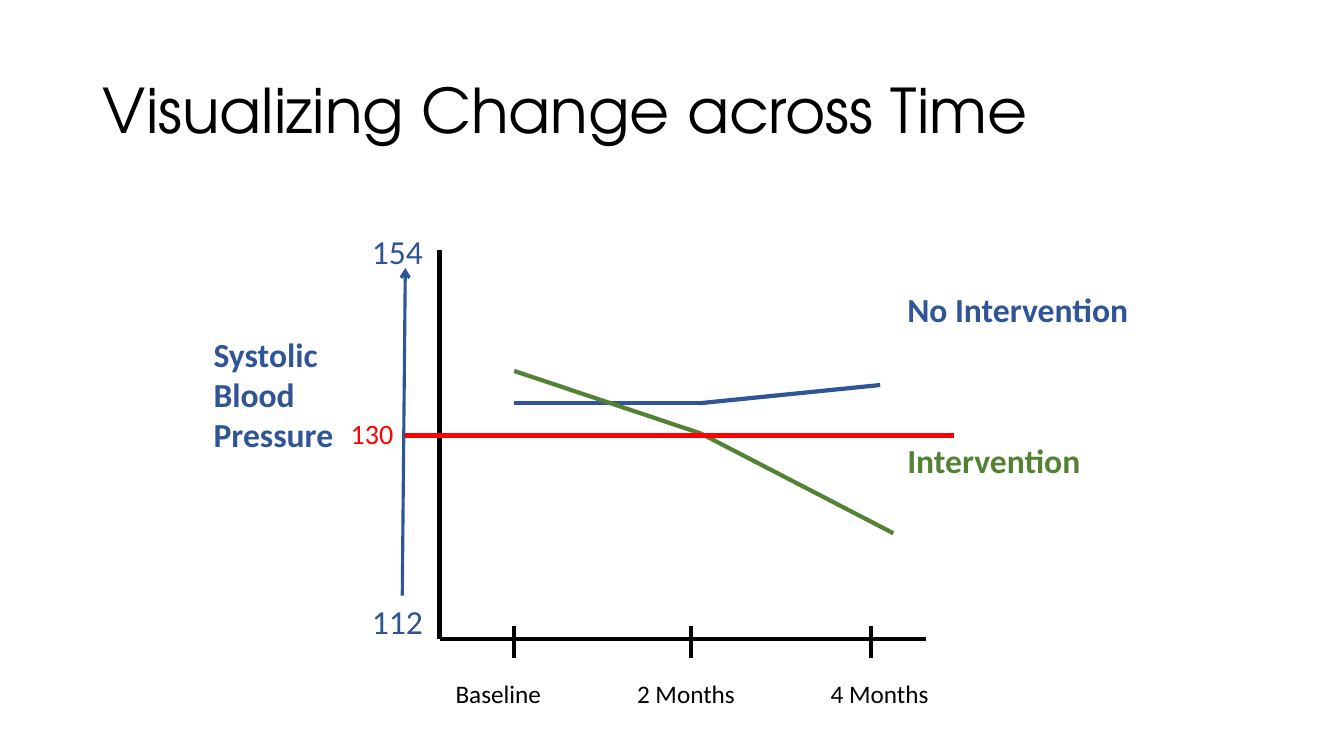
from lxml import etree
from pptx import Presentation
from pptx import util as u
from pptx.dml.color import RGBColor
from pptx.enum import shapes, text
from pptx.oxml.ns import qn

PX = 9144  # one px is a hundredth of an inch
BLACK = RGBColor(0x00, 0x00, 0x00)
BLUE = RGBColor(0x2F, 0x55, 0x97)
GREEN = RGBColor(0x54, 0x82, 0x35)
RED = RGBColor(0xFF, 0x00, 0x00)


class Deck:
    title_font = "TeX Gyre Adventor"
    body_font = "Calibri"

    def __init__(self, width, height):
        self.prs = Presentation()
        self.prs.slide_width = u.Emu(width * PX)
        self.prs.slide_height = u.Emu(height * PX)
        self.slide = None

    def add_slide(self, title, box):
        self.slide = self.prs.slides.add_slide(self.prs.slide_layouts[5])
        sp = self.slide.shapes.title
        sp.left, sp.top, sp.width, sp.height = (u.Emu(v * PX) for v in box)
        tf = sp.text_frame
        tf.text = title
        tf.word_wrap = True
        tf.auto_size = text.MSO_AUTO_SIZE.NONE
        tf.vertical_anchor = text.MSO_ANCHOR.MIDDLE
        p = tf.paragraphs[0]
        p.alignment = text.PP_ALIGN.LEFT
        p.line_spacing = 0.9
        self.style(p.font, self.title_font, 44, BLACK)

    def style(self, font, name, size, color, bold=False):
        font.name = name
        font.size = u.Pt(size)
        font.bold = bold
        font.color.rgb = color

    def label(self, words, box, size, color, bold=False):
        sp = self.slide.shapes.add_textbox(*(u.Emu(v * PX) for v in box))
        tf = sp.text_frame
        tf.word_wrap = True
        tf.text = words
        self.style(tf.paragraphs[0].font, self.body_font, size, color, bold)

    def line(self, start, end, color, width=3, arrow=False):
        ends = (u.Emu(v * PX) for v in (*start, *end))
        cx = self.slide.shapes.add_connector(shapes.MSO_CONNECTOR.STRAIGHT, *ends)
        cx.line.color.rgb = color
        cx.line.width = u.Pt(width)
        if arrow:
            etree.SubElement(cx.line._get_or_add_ln(), qn("a:tailEnd"), type="arrow")
        etree.SubElement(cx._element.spPr, qn("a:effectLst"))

    def polyline(self, points, color):
        for start, end in zip(points, points[1:]):
            self.line(start, end, color)


def main():
    deck = Deck(1333, 750)
    deck.add_slide("Visualizing Change across Time", (92, 40, 1150, 145))

    # Axes
    origin = (436, 634)
    deck.line(origin, (918, 634), BLACK)
    deck.line(origin, (436, 248), BLACK)

    # Time points: tick, label left
    for name, tick, left in (("Baseline", 510, 442), ("2 Months", 685, 622),
                             ("4 Months", 864, 814)):
        deck.line((tick, 621), (tick, 653), BLACK)
        deck.label(name, (left, 668, 153, 40), 18, BLACK)

    # Blood pressure scale
    deck.label("Systolic Blood Pressure", (202, 326, 164, 131), 24, BLUE, bold=True)
    deck.line((399, 591), (402, 266), BLUE, 2.25, arrow=True)
    for value, top in (("154", 224), ("112", 591)):
        deck.label(value, (359, top, 90, 50), 24, BLUE)

    # Group trends
    deck.polyline([(510, 400), (694, 400), (873, 382)], BLUE)
    deck.polyline([(510, 368), (695, 430), (886, 529)], GREEN)
    for name, top, color in (("No Intervention", 282, BLUE), ("Intervention", 432, GREEN)):
        deck.label(name, (890, top, 241, 50), 24, color, bold=True)

    # Threshold
    deck.line((402, 432), (946, 432), RED)
    deck.label("130", (338, 408, 86, 44), 20, RED)

    deck.prs.save("out.pptx")


if __name__ == "__main__":
    main()
